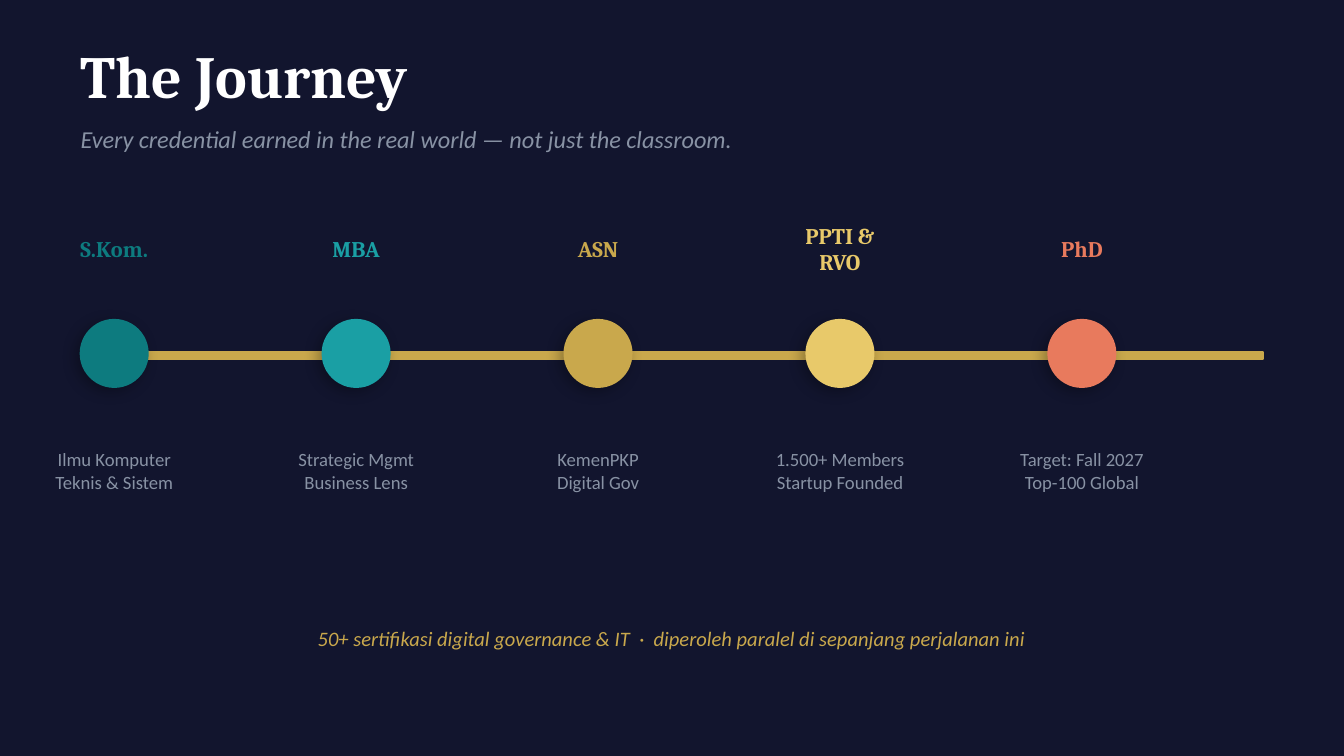
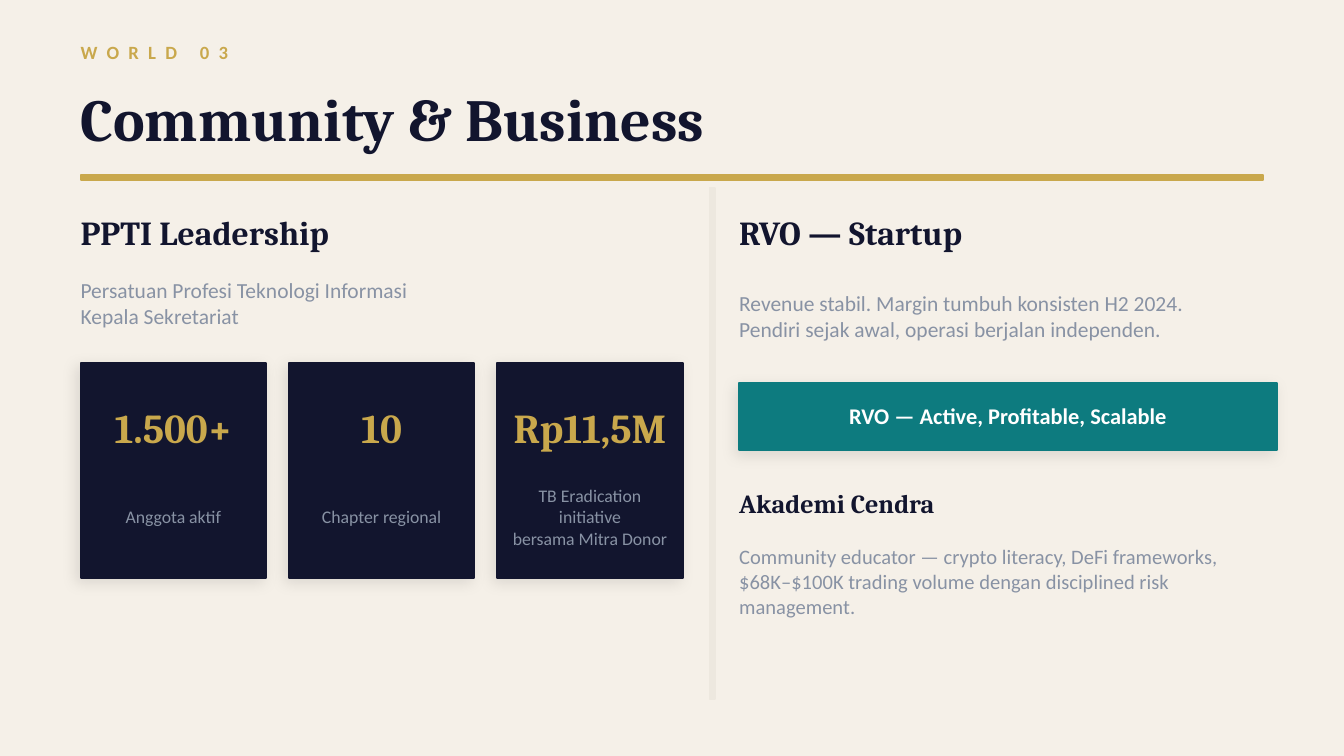
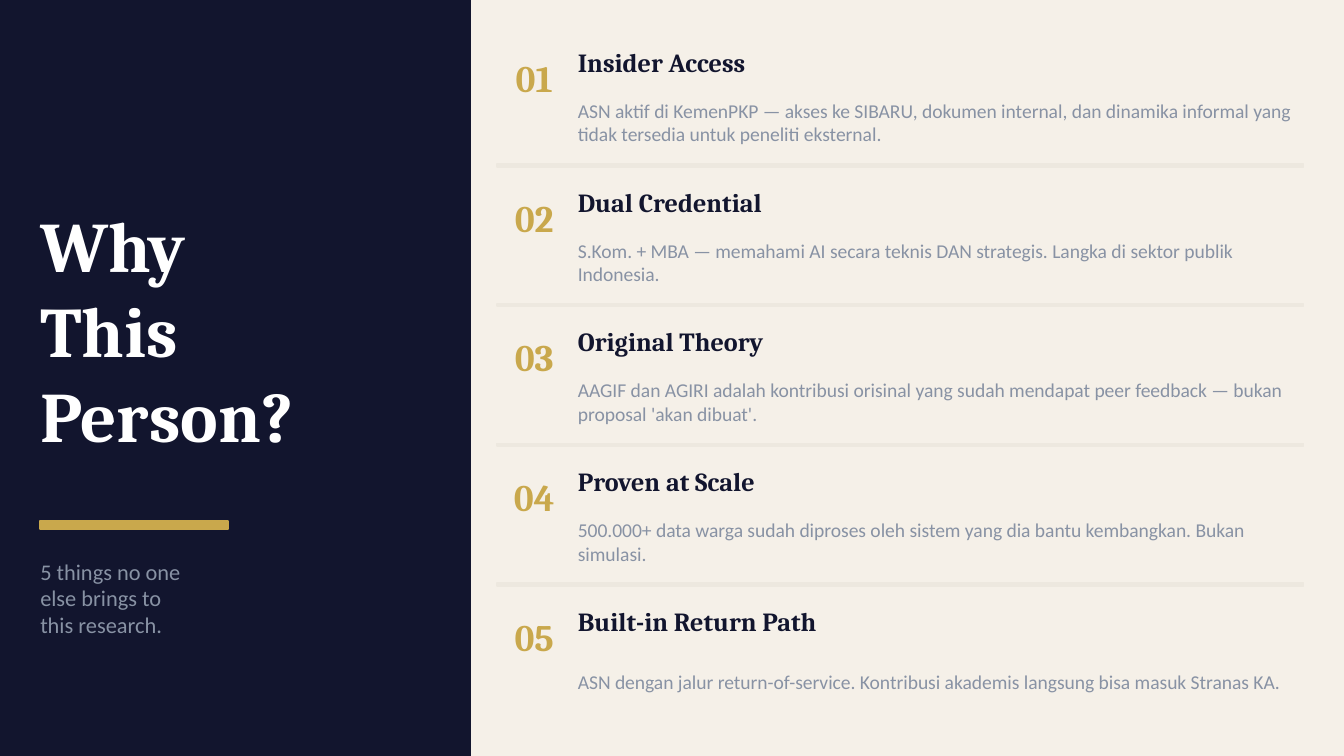
from dataclasses import dataclass, replace

from lxml.etree import SubElement
from pptx import Presentation
from pptx.dml.color import RGBColor
from pptx.enum.shapes import MSO_SHAPE
from pptx.enum.text import MSO_ANCHOR, PP_ALIGN
from pptx.oxml.ns import qn
from pptx.shapes.autoshape import Shape
from pptx.slide import Slide
from pptx.util import Inches, Pt

# Widescreen page, 16:9
PAGE_WIDTH = 10
PAGE_HEIGHT = PAGE_WIDTH * 9 / 16

# Shared palette
NAVY, CREAM, WHITE, GRAY = "12152E", "F5F0E8", "FFFFFF", "8892A4"
GOLD, LIGHT_GOLD, CORAL, RULE = "C9A84C", "E8C96A", "E87A5D", "EDE8DF"
TEAL, BRIGHT_TEAL = "0D7B7F", "1A9FA4"


@dataclass(frozen=True)
class Style:
    font: str
    size: float
    color: str
    bold: bool = False
    italic: bool = False
    centered: bool = False
    spacing: float = 0


def heading(size: float, color: str = NAVY, centered: bool = False) -> Style:
    return Style("Cambria", size, color, bold=True, centered=centered)


def body(size: float, color: str = GRAY, centered: bool = False) -> Style:
    return Style("Calibri", size, color, centered=centered)


# Shared text styles
SLIDE_TITLE = heading(32)
SECTION = heading(18)
ITEM_TITLE = heading(14)
DETAIL = body(11.5)


@dataclass(frozen=True)
class Milestone:
    name: str
    detail: str
    color: str


@dataclass(frozen=True)
class Stat:
    value: str
    label: str


@dataclass(frozen=True)
class Reason:
    title: str
    detail: str


MILESTONES = [
    Milestone("S.Kom.", "Ilmu Komputer\nTeknis & Sistem", TEAL),
    Milestone("MBA", "Strategic Mgmt\nBusiness Lens", BRIGHT_TEAL),
    Milestone("ASN", "KemenPKP\nDigital Gov", GOLD),
    Milestone("PPTI &\nRVO", "1.500+ Members\nStartup Founded", LIGHT_GOLD),
    Milestone("PhD", "Target: Fall 2027\nTop-100 Global", CORAL),
]

STATS = [
    Stat("1.500+", "Anggota aktif"),
    Stat("10", "Chapter regional"),
    Stat("Rp11,5M", "TB Eradication initiative\nbersama Mitra Donor"),
]

REASONS = [
    Reason("Insider Access",
           "ASN aktif di KemenPKP — akses ke SIBARU, dokumen internal, dan dinamika "
           "informal yang tidak tersedia untuk peneliti eksternal."),
    Reason("Dual Credential",
           "S.Kom. + MBA — memahami AI secara teknis DAN strategis. Langka di sektor "
           "publik Indonesia."),
    Reason("Original Theory",
           "AAGIF dan AGIRI adalah kontribusi orisinal yang sudah mendapat peer "
           "feedback — bukan proposal 'akan dibuat'."),
    Reason("Proven at Scale",
           "500.000+ data warga sudah diproses oleh sistem yang dia bantu kembangkan. "
           "Bukan simulasi."),
    Reason("Built-in Return Path",
           "ASN dengan jalur return-of-service. Kontribusi akademis langsung bisa "
           "masuk Stranas KA."),
]


def rgb(color: str) -> RGBColor:
    return RGBColor.from_string(color)


def add_page(deck: Presentation, background: str) -> Slide:
    page = deck.slides.add_slide(deck.slide_layouts[6])
    page.background.fill.solid()
    page.background.fill.fore_color.rgb = rgb(background)
    return page


def add_text(page: Slide, text: str, left: float, top: float, width: float,
             height: float, style: Style) -> None:
    box = page.shapes.add_textbox(Inches(left), Inches(top), Inches(width), Inches(height))
    frame = box.text_frame
    frame.word_wrap = True
    frame.vertical_anchor = MSO_ANCHOR.MIDDLE
    frame.margin_left = frame.margin_right = frame.margin_top = frame.margin_bottom = 0
    frame.text = text
    for para in frame.paragraphs:
        para.alignment = PP_ALIGN.CENTER if style.centered else PP_ALIGN.LEFT
        for span in para.runs:
            font = span.font
            font.name, font.size = style.font, Pt(style.size)
            font.bold, font.italic = style.bold, style.italic
            font.color.rgb = rgb(style.color)
            if style.spacing:
                span._r.get_or_add_rPr().set("spc", str(int(style.spacing * 100)))


def add_shadow(shape: Shape, opacity: int) -> None:
    effects = shape._element.spPr.find(qn("a:effectLst"))
    shadow = SubElement(effects, qn("a:outerShdw"), blurRad=str(Pt(8)), dist=str(Pt(3)),
                        dir=str(135 * 60000), algn="bl", rotWithShape="0")
    color = SubElement(shadow, qn("a:srgbClr"), val="000000")
    SubElement(color, qn("a:alpha"), val=str(opacity * 1000))


def add_block(page: Slide, left: float, top: float, width: float, height: float,
              color: str, shadow: int = 0, kind: MSO_SHAPE = MSO_SHAPE.RECTANGLE) -> None:
    shape = page.shapes.add_shape(kind, Inches(left), Inches(top), Inches(width), Inches(height))
    shape.fill.solid()
    shape.fill.fore_color.rgb = rgb(color)
    shape.line.color.rgb = rgb(color)
    shape.line.width = Pt(1)
    shape.shadow.inherit = False
    if shadow:
        add_shadow(shape, shadow)


def build_journey(deck: Presentation) -> None:
    page = add_page(deck, NAVY)
    add_text(page, "The Journey", 0.6, 0.28, 8.8, 0.55, replace(SLIDE_TITLE, color=WHITE))
    add_text(page, "Every credential earned in the real world — not just the classroom.",
             0.6, 0.88, 8.8, 0.3, replace(body(13), italic=True))

    # Timeline with evenly spaced milestones
    add_block(page, 0.6, 2.62, 8.8, 0.05, GOLD)
    for index, milestone in enumerate(MILESTONES):
        left = 0.6 + 1.8 * index
        add_block(page, left, 2.38, 0.5, 0.5, milestone.color, 30, MSO_SHAPE.OVAL)
        add_text(page, milestone.name, left - 0.2, 1.5, 0.9, 0.7,
                 heading(12, milestone.color, centered=True))
        add_text(page, milestone.detail, left - 0.3, 3.05, 1.1, 0.9, body(10, centered=True))

    add_text(page, "50+ sertifikasi digital governance & IT  ·  "
             "diperoleh paralel di sepanjang perjalanan ini",
             0.6, 4.6, 8.8, 0.3, replace(body(11, GOLD, centered=True), italic=True))


def build_community(deck: Presentation) -> None:
    page = add_page(deck, CREAM)
    add_text(page, "WORLD 03", 0.6, 0.25, 4, 0.28,
             replace(body(10, GOLD), bold=True, spacing=5))
    add_text(page, "Community & Business", 0.6, 0.55, 9, 0.65, SLIDE_TITLE)
    add_block(page, 0.6, 1.3, 8.8, 0.04, GOLD)

    # Left column: association and its figures
    add_text(page, "PPTI Leadership", 0.6, 1.5, 4.5, 0.45, SECTION)
    add_text(page, "Persatuan Profesi Teknologi Informasi\nKepala Sekretariat",
             0.6, 1.98, 4.2, 0.55, DETAIL)
    for index, stat in enumerate(STATS):
        left = 0.6 + 1.55 * index
        add_block(page, left, 2.7, 1.38, 1.6, NAVY, 10)
        add_text(page, stat.value, left, 2.85, 1.38, 0.65, heading(22, GOLD, centered=True))
        add_text(page, stat.label, left + 0.07, 3.52, 1.24, 0.65, body(9.5, centered=True))

    # Right column: startup and teaching
    add_block(page, 5.28, 1.4, 0.04, 3.8, RULE)
    add_text(page, "RVO — Startup", 5.5, 1.5, 4.2, 0.45, SECTION)
    add_text(page, "Revenue stabil. Margin tumbuh konsisten H2 2024.\v"
             "Pendiri sejak awal, operasi berjalan independen.", 5.5, 2, 4.1, 0.7, DETAIL)
    add_block(page, 5.5, 2.85, 4, 0.5, TEAL, 10)
    add_text(page, "RVO — Active, Profitable, Scalable", 5.5, 2.88, 4, 0.42,
             replace(body(12, WHITE, centered=True), bold=True))
    add_text(page, "Akademi Cendra", 5.5, 3.55, 4.2, 0.38, ITEM_TITLE)
    add_text(page, "Community educator — crypto literacy, DeFi frameworks,\n"
             "$68K–$100K trading volume dengan disciplined risk management.",
             5.5, 3.95, 4.1, 0.75, body(11))


def build_reasons(deck: Presentation) -> None:
    page = add_page(deck, CREAM)

    # Title panel
    add_block(page, 0, 0, 3.5, PAGE_HEIGHT, NAVY)
    add_text(page, "Why\nThis\nPerson?", 0.3, 1.2, 2.9, 2.5, heading(38, WHITE))
    add_block(page, 0.3, 3.88, 1.4, 0.06, GOLD)
    add_text(page, "5 things no one\nelse brings to\nthis research.",
             0.3, 4, 2.9, 0.9, body(12))

    # Numbered reasons, with a rule between rows
    for index, reason in enumerate(REASONS):
        top = 0.3 + 1.04 * index
        if index:
            add_block(page, 3.7, top - 0.12, 6, 0.02, RULE)
        add_text(page, f"{index + 1:02d}", 3.7, top, 0.55, 0.55,
                 heading(20, GOLD, centered=True))
        add_text(page, reason.title, 4.3, top, 5.4, 0.32, ITEM_TITLE)
        add_text(page, reason.detail, 4.3, top + 0.36, 5.4, 0.5, body(10.5))


def main() -> None:
    deck = Presentation()
    deck.slide_width, deck.slide_height = Inches(PAGE_WIDTH), Inches(PAGE_HEIGHT)
    build_journey(deck)
    build_community(deck)
    build_reasons(deck)
    deck.save("out.pptx")


if __name__ == "__main__":
    main()
